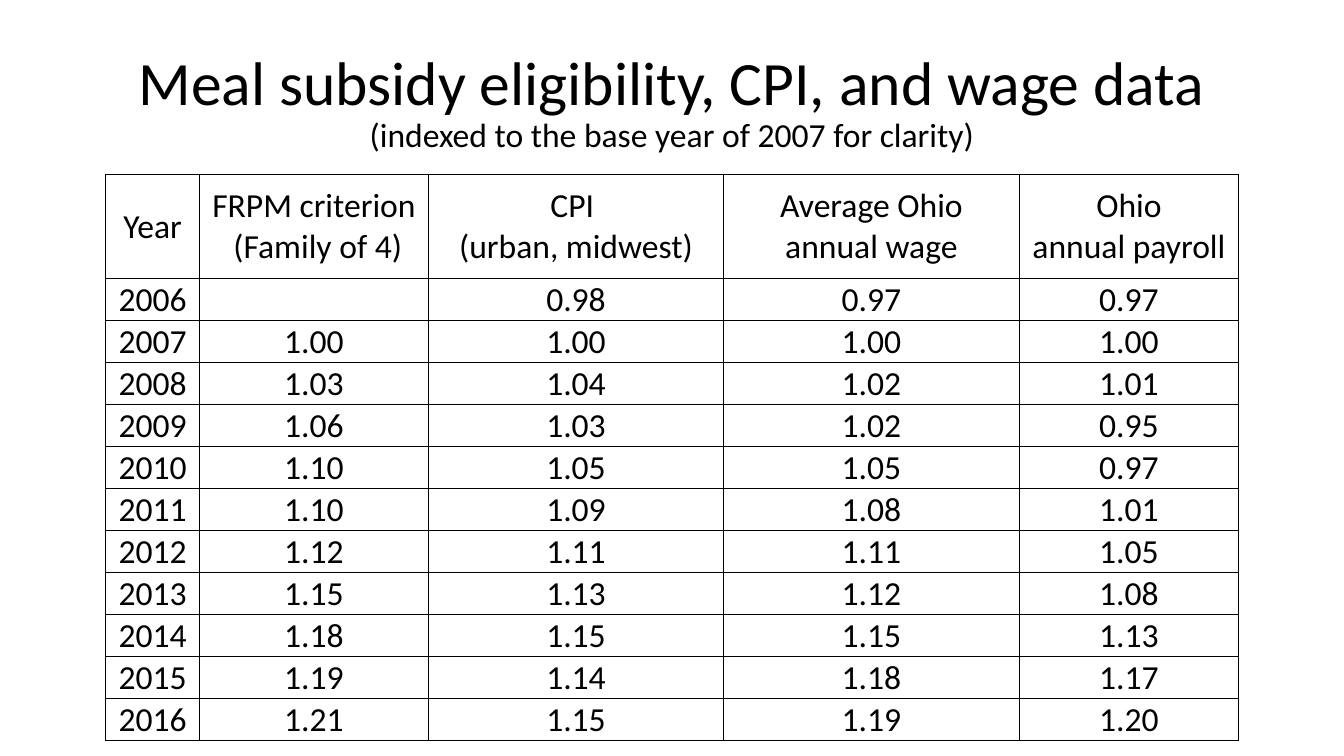
"""Build a slide with a table of indexed meal subsidy, price and wage data."""
from pptx import Presentation
from pptx.dml.color import RGBColor
from pptx.enum.text import MSO_ANCHOR, PP_ALIGN
from pptx.oxml import parse_xml
from pptx.oxml.ns import nsdecls
from pptx.util import Pt

BLANK = 6
CENTER = PP_ALIGN.CENTER
MIDDLE = MSO_ANCHOR.MIDDLE
BOTTOM = MSO_ANCHOR.BOTTOM
COLORS = {"text": "000000", "line": "000000", "fill": "FFFFFF"}
FONT = "Calibri"
WIDTHS = [67, 163.4, 211, 211, 157]
HEAD_H, ROW_H = 74.2, 30
MARGINS = {
    "margin_left": Pt(0.7),
    "margin_right": Pt(0.7),
    "margin_top": Pt(0.7),
    "margin_bottom": Pt(0),
}
ROWS = [
    ["Year", "FRPM criterion\n (Family of 4)", "CPI \n(urban, midwest)",
     "Average Ohio\nannual wage", "Ohio\nannual payroll"],
    ["2006", "", "0.98", "0.97", "0.97"],
    ["2007", "1.00", "1.00", "1.00", "1.00"],
    ["2008", "1.03", "1.04", "1.02", "1.01"],
    ["2009", "1.06", "1.03", "1.02", "0.95"],
    ["2010", "1.10", "1.05", "1.05", "0.97"],
    ["2011", "1.10", "1.09", "1.08", "1.01"],
    ["2012", "1.12", "1.11", "1.11", "1.05"],
    ["2013", "1.15", "1.13", "1.12", "1.08"],
    ["2014", "1.18", "1.15", "1.15", "1.13"],
    ["2015", "1.19", "1.14", "1.18", "1.17"],
    ["2016", "1.21", "1.15", "1.19", "1.20"],
]


def apply(item, values):
    for name, value in values.items():
        setattr(item, name, value)


def style_font(font, size):
    apply(font, {"name": FONT, "size": Pt(size), "bold": False})
    font.color.rgb = RGBColor.from_string(COLORS["text"])


def add_title(slide, box, lines):
    frame = slide.shapes.add_textbox(*map(Pt, box)).text_frame
    apply(frame, {"word_wrap": True, "vertical_anchor": MIDDLE})
    para = frame.paragraphs[0]
    apply(para, {"alignment": CENTER, "line_spacing": 0.9})
    for index, (text, size) in enumerate(lines):
        if index:
            para.add_line_break()
        run = para.add_run()
        run.text = text
        style_font(run.font, size)


def add_border(cell):
    props = cell._tc.get_or_add_tcPr()
    for side in ("lnL", "lnR", "lnT", "lnB"):
        props.append(parse_xml(
            f'<a:{side} {nsdecls("a")} w="{Pt(1)}"><a:solidFill>'
            f'<a:srgbClr val="{COLORS["line"]}"/></a:solidFill></a:{side}>'))


def fill_cell(cell, text, anchor):
    apply(cell, {**MARGINS, "vertical_anchor": anchor, "text": text})
    for para in cell.text_frame.paragraphs:
        para.alignment = CENTER
        style_font(para.font, 24)
        for run in para.runs:
            style_font(run.font, 24)
    add_border(cell)
    cell.fill.solid()
    cell.fill.fore_color.rgb = RGBColor.from_string(COLORS["fill"])


def add_grid(slide, left, top, rows):
    high = HEAD_H + ROW_H * (len(rows) - 1)
    box = (left, top, sum(WIDTHS), high)
    table = slide.shapes.add_table(
        len(rows), len(WIDTHS), *map(Pt, box)).table
    apply(table, {"first_row": False, "horz_banding": False})
    for column, width in zip(table.columns, WIDTHS):
        column.width = Pt(width)
    for index, (row, texts) in enumerate(zip(table.rows, rows)):
        row.height = Pt(ROW_H if index else HEAD_H)
        for cell, text in zip(row.cells, texts):
            fill_cell(cell, text, BOTTOM if index else MIDDLE)


def main():
    deck = Presentation()
    apply(deck, {"slide_width": Pt(960), "slide_height": Pt(540)})
    slide = deck.slides.add_slide(deck.slide_layouts[BLANK])
    add_title(slide, (66, 14.4, 828, 118.8), [
        ("Meal subsidy eligibility, CPI, and wage data", 44),
        ("(indexed to the base year of 2007 for clarity)", 24),
    ])
    add_grid(slide, 75.6, 124.6, ROWS)
    deck.save("out.pptx")


if __name__ == "__main__":
    main()
